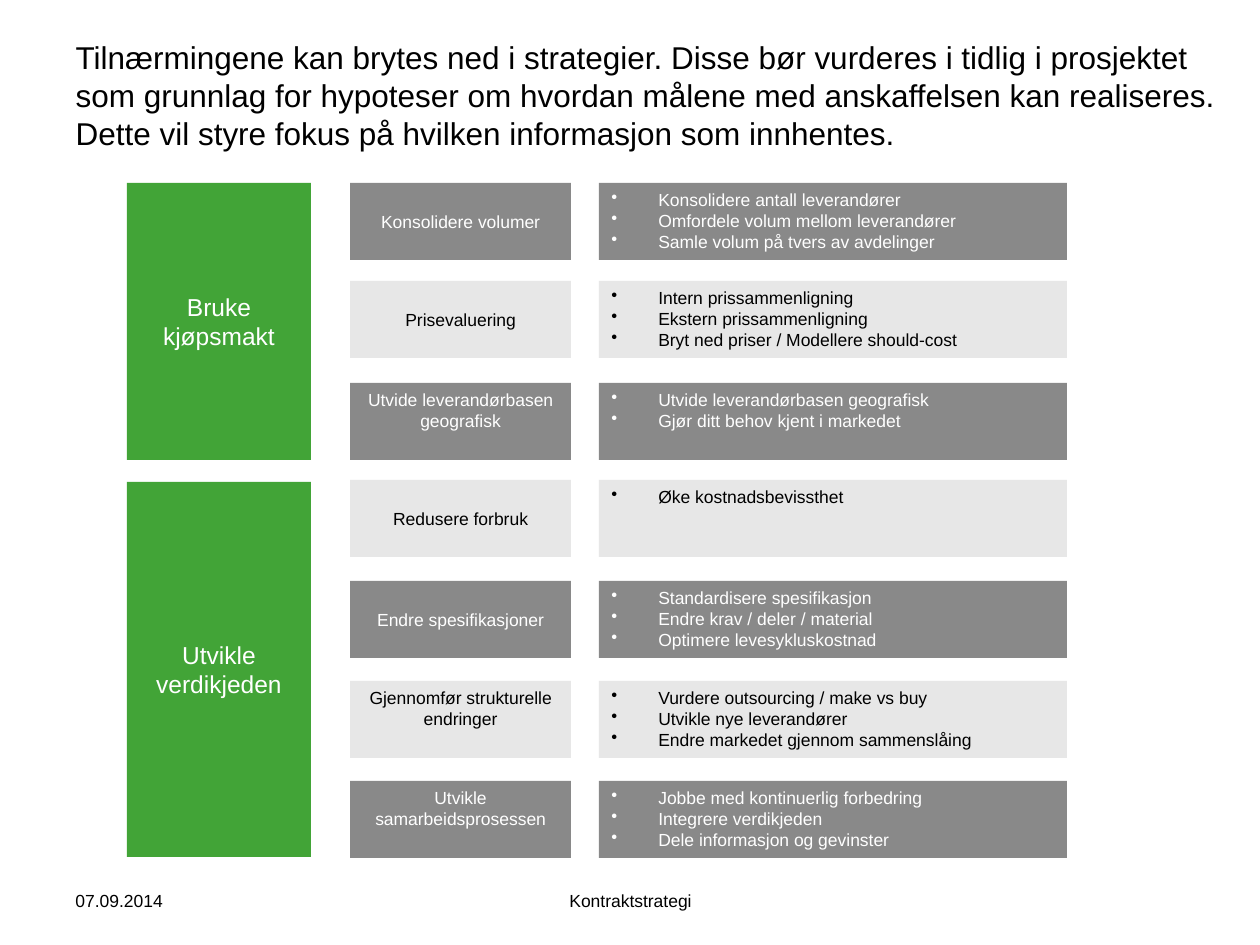
from dataclasses import dataclass

from lxml import etree
from pptx import Presentation
from pptx import util as u
from pptx.dml.color import RGBColor
from pptx.enum import shapes, text
from pptx.oxml.ns import qn


@dataclass(frozen=True)
class Theme:
    font: str = "Arial"
    green: str = "42A437"
    dark: str = "898989"
    light: str = "E7E7E7"
    white: str = "FFFFFF"
    black: str = "000000"
    title: int = 18
    heading: int = 14
    body: int = 10


@dataclass(frozen=True)
class Box:
    x: int
    y: int
    w: int
    h: int


@dataclass(frozen=True)
class Approach:
    name: str
    top: int
    height: int


@dataclass(frozen=True)
class Strategy:
    name: str
    top: int
    actions: tuple[str, ...]
    anchor: text.MSO_ANCHOR = text.MSO_ANCHOR.MIDDLE


THEME = Theme()
PX_PER_INCH = 126
ROW_HEIGHT = 77
BULLET_INDENT = 47
LEFT, CENTER = text.PP_ALIGN.LEFT, text.PP_ALIGN.CENTER
TOP, MIDDLE = text.MSO_ANCHOR.TOP, text.MSO_ANCHOR.MIDDLE

TITLE = ("Tilnærmingene kan brytes ned i strategier. Disse bør vurderes i tidlig i "
         "prosjektet som grunnlag for hypoteser om hvordan målene med anskaffelsen kan "
         "realiseres. Dette vil styre fokus på hvilken informasjon som innhentes.")

APPROACHES = (
    Approach("Bruke kjøpsmakt", 183, 277),
    Approach("Utvikle verdikjeden", 482, 375),
)

STRATEGIES = (
    Strategy("Konsolidere volumer", 183, (
        "Konsolidere antall leverandører",
        "Omfordele volum mellom leverandører",
        "Samle volum på tvers av avdelinger")),
    Strategy("Prisevaluering", 281, (
        "Intern prissammenligning",
        "Ekstern prissammenligning",
        "Bryt ned priser / Modellere should-cost")),
    Strategy("Utvide leverandørbasen geografisk", 383, (
        "Utvide leverandørbasen geografisk",
        "Gjør ditt behov kjent i markedet"), TOP),
    Strategy("Redusere forbruk", 480, ("Øke kostnadsbevissthet",)),
    Strategy("Endre spesifikasjoner", 581, (
        "Standardisere spesifikasjon",
        "Endre krav / deler / material",
        "Optimere levesykluskostnad")),
    Strategy("Gjennomfør strukturelle endringer", 681, (
        "Vurdere outsourcing / make vs buy",
        "Utvikle nye leverandører",
        "Endre markedet gjennom sammenslåing"), TOP),
    Strategy("Utvikle samarbeidsprosessen", 781, (
        "Jobbe med kontinuerlig forbedring",
        "Integrere verdikjeden",
        "Dele informasjon og gevinster"), TOP),
)


def px(n: int) -> u.Emu:
    return u.Emu(round(n * 914400 / PX_PER_INCH))


def place(box: Box) -> tuple[u.Emu, ...]:
    return px(box.x), px(box.y), px(box.w), px(box.h)


def add_bullet(p) -> None:
    pPr = p._p.get_or_add_pPr()
    pPr.set("marL", str(px(BULLET_INDENT)))
    pPr.set("indent", str(-px(BULLET_INDENT)))
    etree.SubElement(pPr, qn("a:buChar")).set("char", "•")


def write(sp, lines: tuple[str, ...], size: int, color: str, align=LEFT,
          anchor=MIDDLE, bullets: bool = False) -> None:
    tf = sp.text_frame
    frame = {"word_wrap": True, "auto_size": text.MSO_AUTO_SIZE.NONE,
             "vertical_anchor": anchor}
    for name, value in frame.items():
        setattr(tf, name, value)
    for i, line in enumerate(lines):
        p = tf.paragraphs[0] if i == 0 else tf.add_paragraph()
        p.alignment = align
        if bullets:
            add_bullet(p)
        r = p.add_run()
        r.text = line
        for name, value in {"name": THEME.font, "size": u.Pt(size)}.items():
            setattr(r.font, name, value)
        r.font.color.rgb = RGBColor.from_string(color)


def add_panel(s, box: Box, fill: str):
    sp = s.shapes.add_shape(shapes.MSO_SHAPE.RECTANGLE, *place(box))
    sp.shadow.inherit = False
    sp.fill.solid()
    sp.fill.fore_color.rgb = RGBColor.from_string(fill)
    sp.line.fill.background()
    return sp


def add_approach(s, approach: Approach) -> None:
    sp = add_panel(s, Box(127, approach.top, 184, approach.height), THEME.green)
    write(sp, (approach.name,), THEME.heading, THEME.white, CENTER)


def add_strategy(s, strategy: Strategy, fill: str, color: str) -> None:
    sp = add_panel(s, Box(350, strategy.top, 221, ROW_HEIGHT), fill)
    write(sp, (strategy.name,), THEME.body, color, CENTER, strategy.anchor)
    sp = add_panel(s, Box(599, strategy.top, 468, ROW_HEIGHT), fill)
    write(sp, strategy.actions, THEME.body, color, anchor=TOP, bullets=True)


def add_footer(s, line: str, box: Box, align) -> None:
    write(s.shapes.add_textbox(*place(box)), (line,), THEME.body, THEME.black, align)


def main() -> None:
    prs = Presentation()
    prs.slide_width, prs.slide_height = u.Inches(10), u.Inches(7.5)
    s = prs.slides.add_slide(prs.slide_layouts[5])

    # Title
    sp = s.shapes.title
    sp.left, sp.top, sp.width, sp.height = place(Box(63, 32, 1165, 157))
    write(sp, (TITLE,), THEME.title, THEME.black, anchor=TOP)

    # Approaches
    for approach in APPROACHES:
        add_approach(s, approach)

    # Strategies and actions, in alternating dark and light rows
    for i, strategy in enumerate(STRATEGIES):
        fill, color = ((THEME.light, THEME.black) if i % 2
                       else (THEME.dark, THEME.white))
        add_strategy(s, strategy, fill, color)

    # Footer
    add_footer(s, "07.09.2014", Box(63, 876, 294, 50), LEFT)
    add_footer(s, "Kontraktstrategi", Box(431, 876, 399, 50), CENTER)

    prs.save("out.pptx")


if __name__ == "__main__":
    main()
